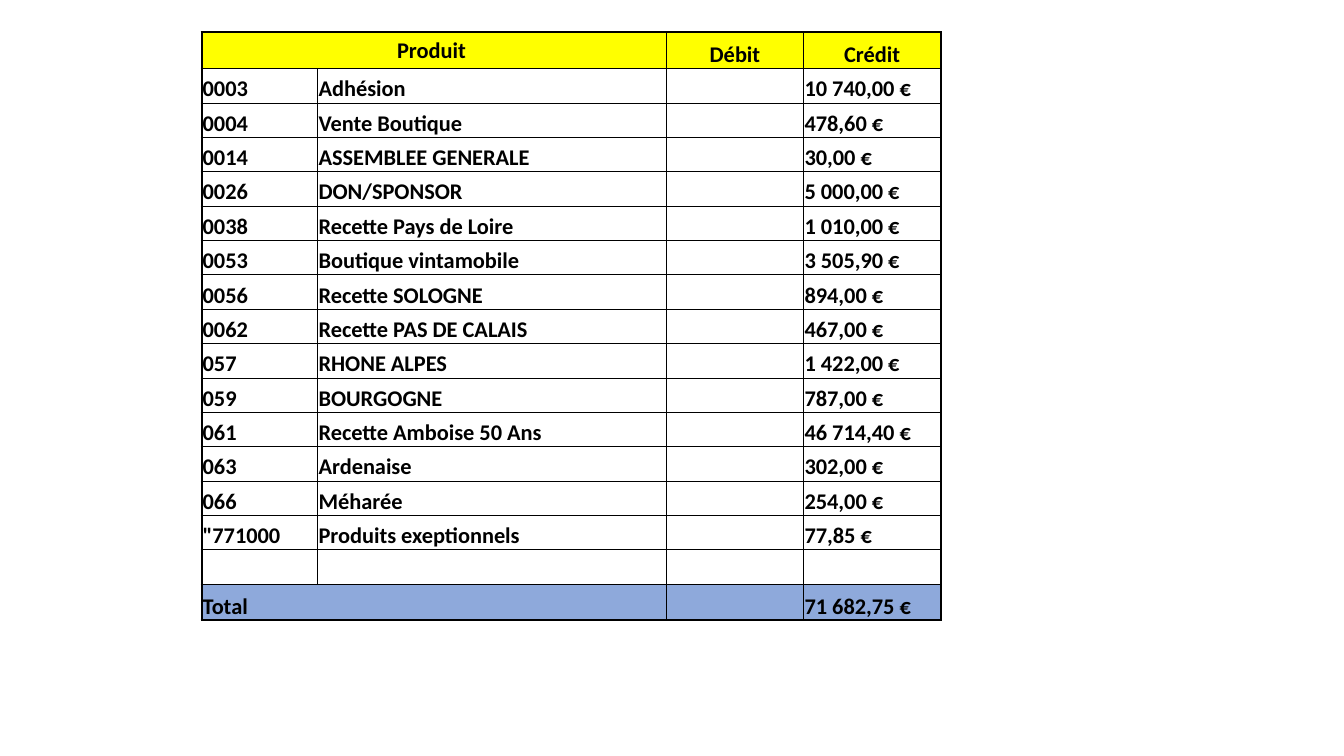
from lxml.etree import SubElement
from pptx import Presentation
from pptx.dml.color import RGBColor
from pptx.enum.text import MSO_ANCHOR as Anchor, PP_ALIGN as Align
from pptx.oxml.ns import qn
from pptx.util import Inches, Pt

COLORS = {"ink": "000000", "header": "FFFF00", "total": "8EA9DB"}
FONT, TEXT_SIZE = "Calibri", 16
THIN, THICK = 0.5, 1.5
COLUMN_WIDTHS = [1.15, 3.46, 1.36, 1.36]
END_ROW_HEIGHT = 0.36

HEADER = ("Produit ", "", "Débit", "Crédit")
INCOME = [
    ("0003", "Adhésion", "10 740,00 €"),
    ("0004", "Vente Boutique", "478,60 €"),
    ("0014", "ASSEMBLEE GENERALE", "30,00 €"),
    ("0026", "DON/SPONSOR", "5 000,00 €"),
    ("0038", "Recette Pays de Loire", "1 010,00 €"),
    ("0053", "Boutique vintamobile", "3 505,90 €"),
    ("0056", "Recette SOLOGNE", "894,00 €"),
    ("0062", "Recette PAS DE CALAIS", "467,00 €"),
    ("057", "RHONE ALPES", "1 422,00 €"),
    ("059", "BOURGOGNE", "787,00 €"),
    ("061", "Recette Amboise 50 Ans", "46 714,40 €"),
    ("063", "Ardenaise", "302,00 €"),
    ("066", "Méharée", "254,00 €"),
    ('"771000', "Produits exeptionnels", "77,85 €"),
    ("", "", ""),
]
TOTAL = ("Total", "", "", "71 682,75 €")


def set_borders(cell, widths):
    """Draw the cell's sides; widths maps L, R, T and B to points."""
    properties = cell._tc.get_or_add_tcPr()
    for side in "LRTB":
        line = SubElement(properties, qn(f"a:ln{side}"), w=str(Pt(widths[side])))
        fill = SubElement(line, qn("a:solidFill"))
        SubElement(fill, qn("a:srgbClr"), val=COLORS["ink"])


def set_fill(cell, color):
    if color is None:
        cell.fill.background()
    else:
        cell.fill.solid()
        cell.fill.fore_color.rgb = RGBColor.from_string(color)


def write_cell(cell, text, align, anchor):
    cell.margin_left = cell.margin_right = cell.margin_top = Inches(0.01)
    cell.margin_bottom = 0
    cell.vertical_anchor = anchor
    if not text:
        return
    paragraph = cell.text_frame.paragraphs[0]
    paragraph.text = text
    paragraph.alignment = align
    font = paragraph.runs[0].font
    font.name, font.size, font.bold = FONT, Pt(TEXT_SIZE), True
    font.color.rgb = RGBColor.from_string(COLORS["ink"])


def add_income_table(slide, left, top, width, height):
    entries = [(code, label, "", credit) for code, label, credit in INCOME]
    rows = [HEADER, *entries, TOTAL]
    last_row, last_column = len(rows) - 1, len(COLUMN_WIDTHS) - 1
    entry_height = (height - 2 * END_ROW_HEIGHT) / len(entries)

    table = slide.shapes.add_table(
        len(rows), len(COLUMN_WIDTHS),
        Inches(left), Inches(top), Inches(width), Inches(height)).table
    table.first_row = table.horz_banding = False
    for column, column_width in zip(table.columns, COLUMN_WIDTHS):
        column.width = Inches(column_width)

    for r, values in enumerate(rows):
        is_end = r in (0, last_row)
        table.rows[r].height = Inches(END_ROW_HEIGHT if is_end else entry_height)
        color = {0: COLORS["header"], last_row: COLORS["total"]}.get(r)
        for c, text in enumerate(values):
            cell = table.cell(r, c)
            set_borders(cell, {
                "L": THICK if c == 0 and True else THIN,
                "R": THICK if c == last_column else THIN,
                "T": THICK if r == 0 else THIN,
                "B": THICK if r == last_row else THIN,
            })
            set_fill(cell, color)
            write_cell(cell, text,
                       Align.CENTER if r == 0 else Align.JUSTIFY,
                       Anchor.MIDDLE if r == c == 0 else Anchor.BOTTOM)

    for r in (0, last_row):
        table.cell(r, 0).merge(table.cell(r, 1))


def main():
    deck = Presentation()
    deck.slide_width, deck.slide_height = Inches(13.33), Inches(7.5)
    slide = deck.slides.add_slide(deck.slide_layouts[6])
    add_income_table(slide, 2, 0.32, sum(COLUMN_WIDTHS), 5.84)
    deck.save("out.pptx")


if __name__ == "__main__":
    main()
